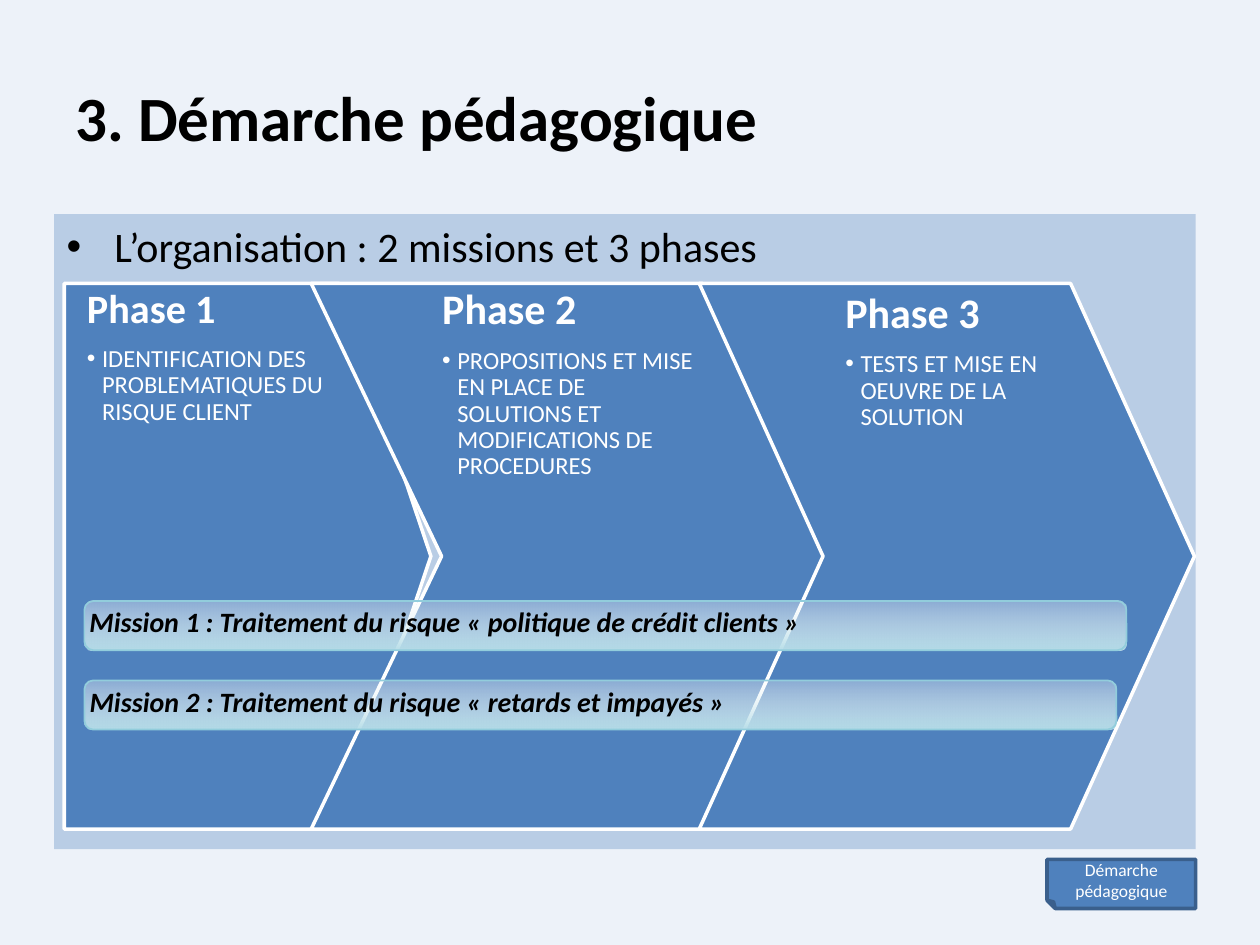
import pptx
import pptx.dml.color
import pptx.enum.shapes
import pptx.enum.text
import pptx.oxml
import pptx.oxml.ns
import pptx.util
from pptx.util import Inches

SHAPE = pptx.enum.shapes.MSO_SHAPE
ANCHOR = pptx.enum.text.MSO_ANCHOR
ALIGN = pptx.enum.text.PP_ALIGN
BLUE, WHITE, BLACK = "4F81BD", "FFFFFF", "000000"
PHASE_TOP, PHASE_HEIGHT = 2.25, 4.33


def rgb(value):
    return pptx.dml.color.RGBColor.from_string(value)


def set_values(target, values):
    for name, value in values.items():
        setattr(target, name, value)


def set_frame(box, insets=(0.1, 0.05, 0.1, 0.05), anchor=ANCHOR.TOP):
    left, top, right, bottom = map(Inches, insets)
    set_values(box.text_frame, {
        "word_wrap": True, "vertical_anchor": anchor,
        "margin_left": left, "margin_top": top,
        "margin_right": right, "margin_bottom": bottom})


def write(para, text, size, color, bold=False, italic=False, **layout):
    span = para.add_run()
    span.text = text
    set_values(span.font, {"name": "Calibri", "size": pptx.util.Pt(size),
                           "bold": bold, "italic": italic})
    span.font.color.rgb = rgb(color)
    set_values(para, {"alignment": ALIGN.LEFT, **layout})


def add_bullet(para, indent):
    properties = para._p.get_or_add_pPr()
    properties.set("marL", str(Inches(indent)))
    properties.set("indent", str(-Inches(indent)))
    namespace = pptx.oxml.ns.nsdecls("a")
    for xml in (f'<a:buFont {namespace} typeface="Arial"/>',
                f'<a:buChar {namespace} char="•"/>'):
        properties.append(pptx.oxml.parse_xml(xml))


def add_box(page, kind, at, fill=None, line=None, width=1, corner=None):
    box = page.shapes.add_shape(kind, *map(Inches, at))
    box.shadow.inherit = False
    if fill:
        box.fill.solid()
        box.fill.fore_color.rgb = rgb(fill)
    if line:
        box.line.color.rgb = rgb(line)
        box.line.width = pptx.util.Pt(width)
    else:
        box.line.fill.background()
    if corner is not None:
        box.adjustments[0] = corner
    return box


def add_title(page, text):
    box = page.shapes.add_textbox(*map(Inches, (0.5, 0.3, 9, 1.25)))
    set_frame(box, anchor=ANCHOR.MIDDLE)
    write(box.text_frame.paragraphs[0], text, 36, BLACK, bold=True)


def add_panel(page, text):
    box = add_box(page, SHAPE.RECTANGLE, (0.43, 1.7, 9.06, 5.04), "B9CDE5")
    set_frame(box)
    para = box.text_frame.paragraphs[0]
    write(para, text, 24, BLACK)
    add_bullet(para, 0.38)


def add_phase_text(page, left, width, insets, heading, size, detail):
    box = page.shapes.add_textbox(
        *map(Inches, (left, PHASE_TOP, width, PHASE_HEIGHT)))
    set_frame(box, insets)
    write(box.text_frame.paragraphs[0], heading, size, WHITE, bold=True,
          line_spacing=0.9, space_after=pptx.util.Pt(8))
    para = box.text_frame.add_paragraph()
    write(para, detail, 14, WHITE, line_spacing=0.9,
          space_after=pptx.util.Pt(2))
    add_bullet(para, 0.12)


def add_mission(page, top, width, text):
    box = add_box(page, SHAPE.ROUNDED_RECTANGLE, (0.67, top, width, 0.39),
                  line="92CDDC", corner=0.18)
    # Vertical gradient, from translucent white to pale blue
    box.fill.gradient()
    box.fill.gradient_angle = 270
    for stop, color in zip(box.fill.gradient_stops, (WHITE, "B6DDE8")):
        stop.color.rgb = rgb(color)
    first = box._element.spPr.find(".//" + pptx.oxml.ns.qn("a:srgbClr"))
    first.append(pptx.oxml.parse_xml(
        f'<a:alpha {pptx.oxml.ns.nsdecls("a")} val="33000"/>'))
    set_frame(box, (0.02, 0.01, 0.02, 0.01))
    write(box.text_frame.paragraphs[0], text, 16, BLACK, bold=True,
          italic=True, space_after=pptx.util.Pt(8))


def add_tab(page, text):
    box = add_box(page, SHAPE.FOLDED_CORNER, (8.31, 6.82, 1.18, 0.39),
                  BLUE, "3A5F8C", 2)
    box._element.spPr.find(pptx.oxml.ns.qn("a:xfrm")).set("flipH", "1")
    set_frame(box, anchor=ANCHOR.MIDDLE)
    write(box.text_frame.paragraphs[0], text, 10, WHITE,
          alignment=ALIGN.CENTER)


def main():
    deck = pptx.Presentation()
    deck.slide_width, deck.slide_height = Inches(10), Inches(7.5)
    page = deck.slides.add_slide(deck.slide_layouts[6])
    page.background.fill.solid()
    page.background.fill.fore_color.rgb = rgb("EDF2F9")

    add_title(page, "3. Démarche pédagogique")
    add_panel(page, "L’organisation : 2 missions et 3 phases")

    # Phases: arrow kind, left, width, then the text laid over it
    phases = (
        (SHAPE.PENTAGON, 0.51, 2.91,
         (0.51, 2.55, (0.18, 0.04, 0, 0.04), "Phase 1", 23,
          "IDENTIFICATION DES PROBLEMATIQUES DU RISQUE CLIENT")),
        (SHAPE.CHEVRON, 2.47, 4.14,
         (3.51, 2.07, (0, 0.04, 0, 0.04), "Phase 2", 24,
          "PROPOSITIONS ET MISE EN PLACE DE SOLUTIONS ET "
          "MODIFICATIONS DE PROCEDURES")),
        (SHAPE.CHEVRON, 5.55, 3.93,
         (6.53, 1.97, (0.18, 0.07, 0, 0.07), "Phase 3", 24,
          "TESTS ET MISE EN OEUVRE DE LA SOLUTION")),
    )
    for kind, left, width, label in phases:
        add_box(page, kind, (left, PHASE_TOP, width, PHASE_HEIGHT),
                BLUE, WHITE, 2, 0.25)
        add_phase_text(page, *label)

    # Missions across the phases
    add_mission(page, 4.77, 8.27, "Mission 1 : Traitement du risque "
                "« politique de crédit clients »")
    add_mission(page, 5.4, 8.19, "Mission 2 : Traitement du risque "
                "« retards et impayés »")

    add_tab(page, "Démarche pédagogique")
    deck.save("out.pptx")


if __name__ == "__main__":
    main()
